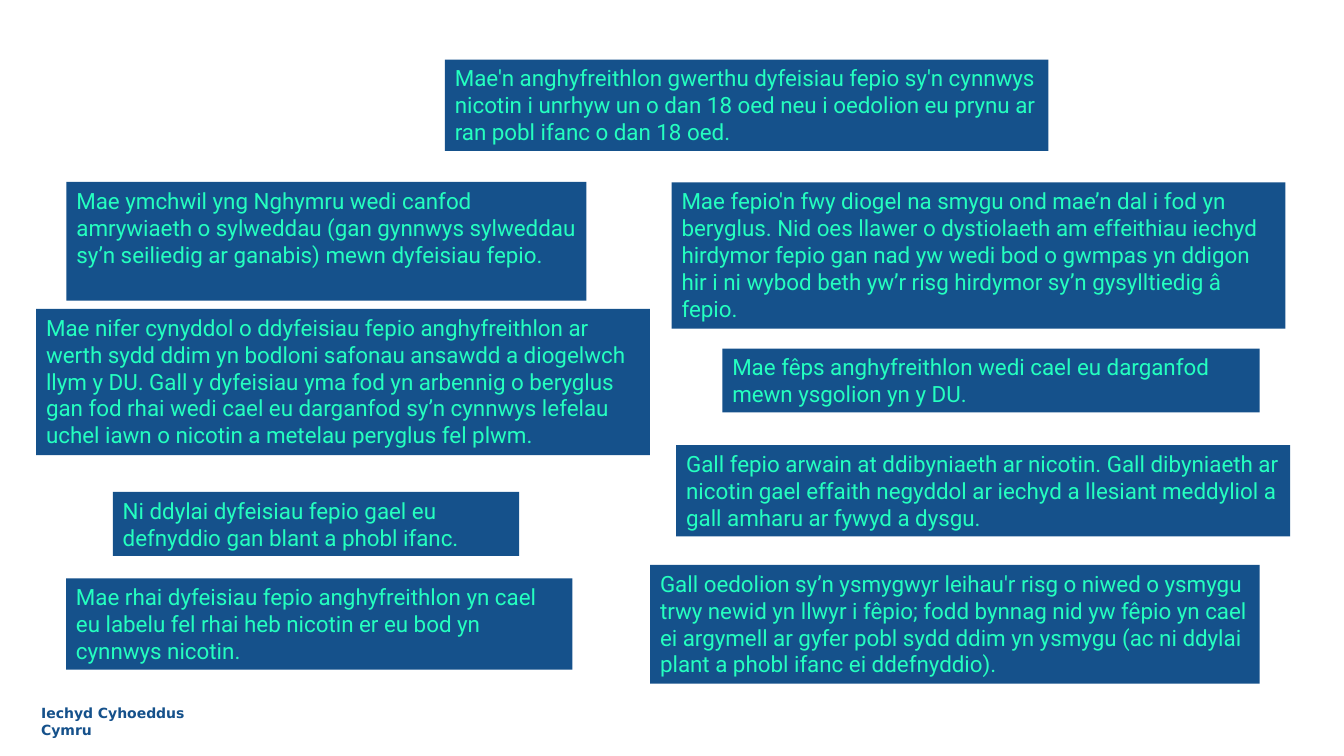
"""Build the slide of Welsh vaping facts set in blue panels."""
from pptx import Presentation
from pptx import util as u
from pptx.dml.color import RGBColor
from pptx.enum import shapes, text

BLUE = "15518B"
MINT = "24FFC0"

FACTS = [
    (80.6, 351.4, 290.2, 2,
     "Ni ddylai dyfeisiau fepio gael eu defnyddio gan blant a phobl ifanc."),
    (317.8, 42.6, 431, 3,
     "Mae'n anghyfreithlon gwerthu dyfeisiau fepio sy'n cynnwys nicotin i unrhyw un "
     "o dan 18 oed neu i oedolion eu prynu ar ran pobl ifanc o dan 18 oed."),
    (516, 249, 383.8, 2,
     "Mae fêps anghyfreithlon wedi cael eu darganfod mewn ysgolion yn y DU."),
    (479.7, 130.3, 438.5, 5,
     "Mae fepio'n fwy diogel na smygu ond mae’n dal i fod yn beryglus. Nid oes llawer "
     "o dystiolaeth am effeithiau iechyd hirdymor fepio gan nad yw wedi bod o gwmpas yn "
     "ddigon hir i ni wybod beth yw’r risg hirdymor sy’n gysylltiedig â fepio."),
    (483, 318, 438.5, 3,
     "Gall fepio arwain at ddibyniaeth ar nicotin. Gall dibyniaeth ar nicotin gael "
     "effaith negyddol ar iechyd a llesiant meddyliol a gall amharu ar fywyd a dysgu."),
    (25.8, 220.7, 438.5, 5,
     "Mae nifer cynyddol o ddyfeisiau fepio anghyfreithlon ar werth sydd ddim yn bodloni "
     "safonau ansawdd a diogelwch llym y DU. Gall y dyfeisiau yma fod yn arbennig o "
     "beryglus gan fod rhai wedi cael eu darganfod sy’n cynnwys lefelau uchel iawn o "
     "nicotin a metelau peryglus fel plwm."),
    (47.5, 130, 371.4, 4,
     "Mae ymchwil yng Nghymru wedi canfod amrywiaeth o sylweddau (gan gynnwys sylweddau "
     "sy’n seiliedig ar ganabis) mewn dyfeisiau fepio."),
    (464.4, 403.6, 435.4, 4,
     "Gall oedolion sy’n ysmygwyr leihau'r risg o niwed o ysmygu trwy newid yn llwyr i "
     "fêpio; fodd bynnag nid yw fêpio yn cael ei argymell ar gyfer pobl sydd ddim yn "
     "ysmygu (ac ni ddylai plant a phobl ifanc ei ddefnyddio)."),
    (47.2, 413.2, 361.7, 3,
     "Mae rhai dyfeisiau fepio anghyfreithlon yn cael eu labelu fel rhai heb nicotin er "
     "eu bod yn cynnwys nicotin."),
]


def colour(hex_value):
    return RGBColor.from_string(hex_value)


class FactSlide:
    font = "Roboto"
    size = 16
    line_height = 19.6
    padding = 6.4

    def __init__(self, presentation):
        self.slide = presentation.slides.add_slide(presentation.slide_layouts[6])

    def set_wording(self, shape, wording, font, size, hex_value, bold=False):
        frame = shape.text_frame
        frame.text = wording
        frame.word_wrap = True
        frame.vertical_anchor = text.MSO_ANCHOR.TOP
        paragraph = frame.paragraphs[0]
        paragraph.alignment = text.PP_ALIGN.LEFT
        for run in paragraph.runs:
            run.font.name = font
            run.font.size = u.Pt(size)
            run.font.bold = bold
            run.font.color.rgb = colour(hex_value)

    def panel(self, left, top, width, lines, wording):
        height = self.padding + lines * self.line_height
        shape = self.slide.shapes.add_shape(
            shapes.MSO_SHAPE.RECTANGLE,
            u.Pt(left), u.Pt(top), u.Pt(width), u.Pt(height))
        shape.shadow.inherit = False
        shape.fill.solid()
        shape.fill.fore_color.rgb = colour(BLUE)
        shape.line.fill.background()
        self.set_wording(shape, wording, self.font, self.size, MINT)

    def label(self, left, top, width, height, wording):
        shape = self.slide.shapes.add_textbox(
            u.Pt(left), u.Pt(top), u.Pt(width), u.Pt(height))
        self.set_wording(shape, wording, "DejaVu Sans", 10, BLUE, bold=True)


def main():
    presentation = Presentation()
    presentation.slide_width = u.Pt(960)
    presentation.slide_height = u.Pt(540)
    fact_slide = FactSlide(presentation)
    fact_slide.label(22.3, 499.7, 130.3, 31, "Iechyd Cyhoeddus Cymru")
    for fact in FACTS:
        fact_slide.panel(*fact)
    presentation.save("out.pptx")


if __name__ == "__main__":
    main()
